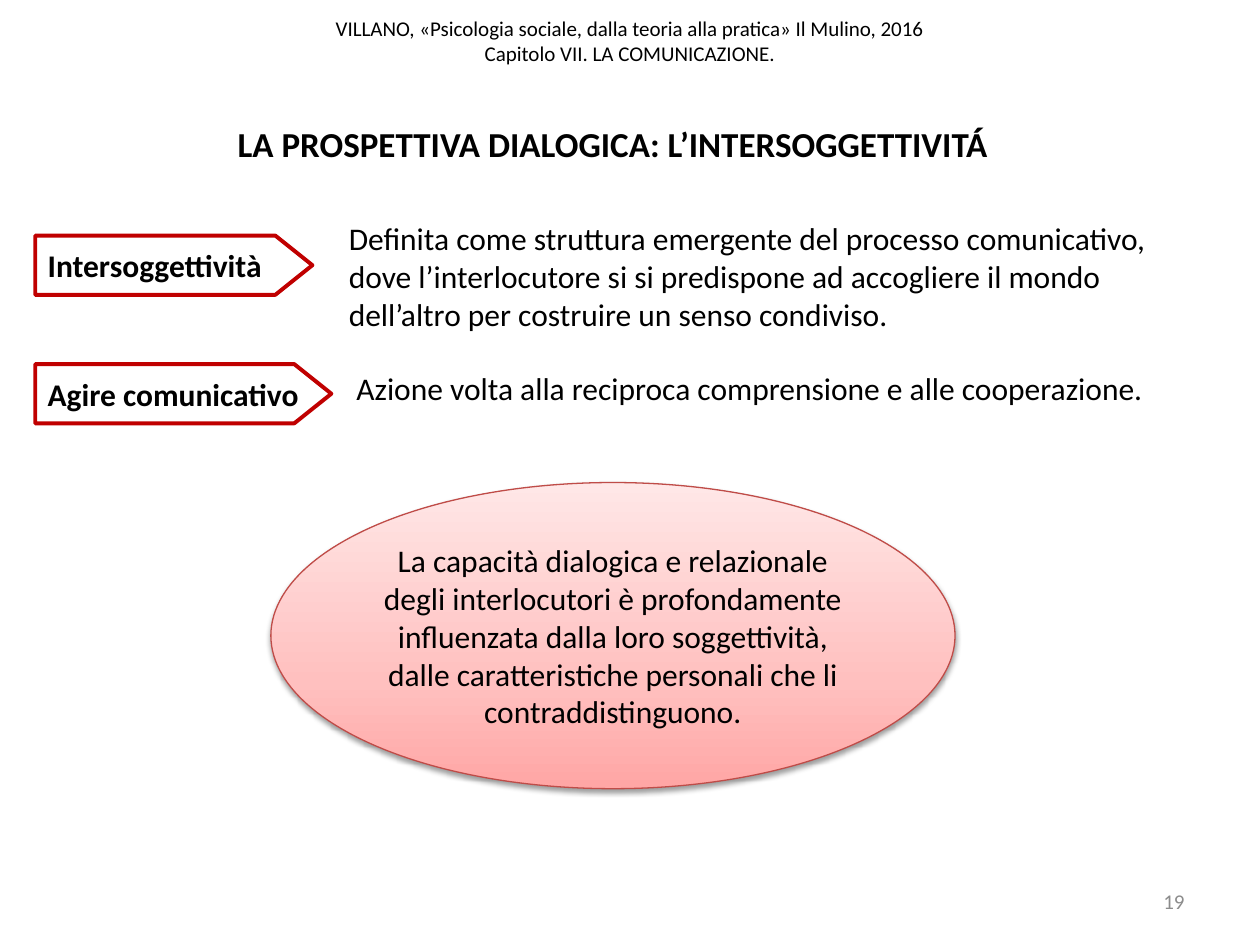
"""Build the slide on intersubjectivity and communicative action."""
from copy import deepcopy

from lxml import etree
from pptx import Presentation
from pptx.dml.color import RGBColor
from pptx.enum.shapes import MSO_SHAPE
from pptx.enum.text import MSO_ANCHOR, MSO_AUTO_SIZE, PP_ALIGN
from pptx.oxml.ns import qn
from pptx.util import Inches, Pt

LEFT, CENTER, RIGHT = PP_ALIGN.LEFT, PP_ALIGN.CENTER, PP_ALIGN.RIGHT
TOP, MIDDLE = MSO_ANCHOR.TOP, MSO_ANCHOR.MIDDLE
NO_FIT = MSO_AUTO_SIZE.NONE
ARROW, OVAL = MSO_SHAPE.PENTAGON, MSO_SHAPE.OVAL

THEME = {
    "font": "Calibri",
    "ink": "000000", "gray": "8C8C8C", "red": "C00000", "rim": "BF4C48",
    "fade": [(0, "FFA6A5"), (0.35, "FFC0BF"), (1, "FFE7E7")],
    "small": 12, "body": 18, "title": 20,
}


def color(name):
    return RGBColor.from_string(THEME.get(name, name))


def write(shape, text, size="body", ink="ink", bold=False, align=LEFT,
          anchor=TOP, wrap=True):
    frame = shape.text_frame
    frame.text = text
    frame.auto_size = NO_FIT
    frame.word_wrap = wrap
    frame.vertical_anchor = anchor
    for para in frame.paragraphs:
        para.alignment = align
        font = para.font
        font.name, font.size, font.bold = THEME["font"], Pt(THEME[size]), bold
        font.color.rgb = color(ink)


deck = Presentation()
deck.slide_width, deck.slide_height = Inches(10), Inches(7.5)
slide = deck.slides.add_slide(deck.slide_layouts[5])
shapes = slide.shapes

title = shapes.title
title.left, title.top = Inches(1.76), Inches(0.92)
title.width, title.height = Inches(6.21), Inches(0.44)
write(title, "LA PROSPETTIVA DIALOGICA: L’INTERSOGGETTIVITÁ", "title",
      bold=True, align=CENTER, wrap=False)

head = shapes.add_textbox(Inches(0), Inches(-0.11), Inches(10), Inches(0.87))
write(head, "VILLANO, «Psicologia sociale, dalla teoria alla pratica» "
      "Il Mulino, 2016\vCapitolo VII. LA COMUNICAZIONE.", "small",
      align=CENTER, anchor=MIDDLE)

page = shapes.add_textbox(Inches(7.17), Inches(6.95), Inches(2.33), Inches(0.4))
write(page, "19", "small", "gray", align=RIGHT, anchor=MIDDLE)

for top, wide, term in [(1.87, 2.2, "Intersoggettività"),
                        (2.89, 2.35, "Agire comunicativo")]:
    tag = shapes.add_shape(ARROW, Inches(0.28), Inches(top),
                           Inches(wide), Inches(0.47))
    tag.adjustments[0] = 0.626
    tag.shadow.inherit = False
    tag.fill.background()
    tag.line.color.rgb = color("red")
    tag.line.width = Pt(2.25)
    write(tag, term, bold=True, anchor=MIDDLE, wrap=False)

for left, top, wide, high, wrap, text in [
    (2.67, 1.69, 6.66, 1.01, True,
     "Definita come struttura emergente del processo comunicativo, dove "
     "l’interlocutore si si predispone ad accogliere il mondo dell’altro "
     "per costruire un senso condiviso."),
    (2.73, 2.88, 6.52, 0.4, False,
     "Azione volta alla reciproca comprensione e alle cooperazione."),
]:
    box = shapes.add_textbox(Inches(left), Inches(top),
                             Inches(wide), Inches(high))
    write(box, text, wrap=wrap)

oval = shapes.add_shape(OVAL, Inches(2.15), Inches(3.83),
                        Inches(5.43), Inches(2.43))
oval.fill.gradient()
oval.fill.gradient_angle = 90
stops = oval.element.spPr.find(".//" + qn("a:gsLst"))
stops.append(deepcopy(stops[-1]))
for stop, (place, shade) in zip(oval.fill.gradient_stops, THEME["fade"]):
    stop.position = place
    stop.color.rgb = color(shade)
oval.line.color.rgb = color("rim")
oval.line.width = Pt(0.75)
oval.shadow.inherit = False
glow = etree.SubElement(
    oval.element.spPr.find(qn("a:effectLst")), qn("a:outerShdw"),
    blurRad=str(Pt(3.1)), dist=str(Pt(1.6)), dir="5400000", rotWithShape="0")
tint = etree.SubElement(glow, qn("a:srgbClr"), val=THEME["ink"])
etree.SubElement(tint, qn("a:alpha"), val="38000")
write(oval, "La capacità dialogica e relazionale\n"
      "degli interlocutori è profondamente influenzata dalla loro "
      "soggettività,\n"
      "dalle caratteristiche personali che li contraddistinguono.",
      align=CENTER, anchor=MIDDLE)

deck.save("out.pptx")
